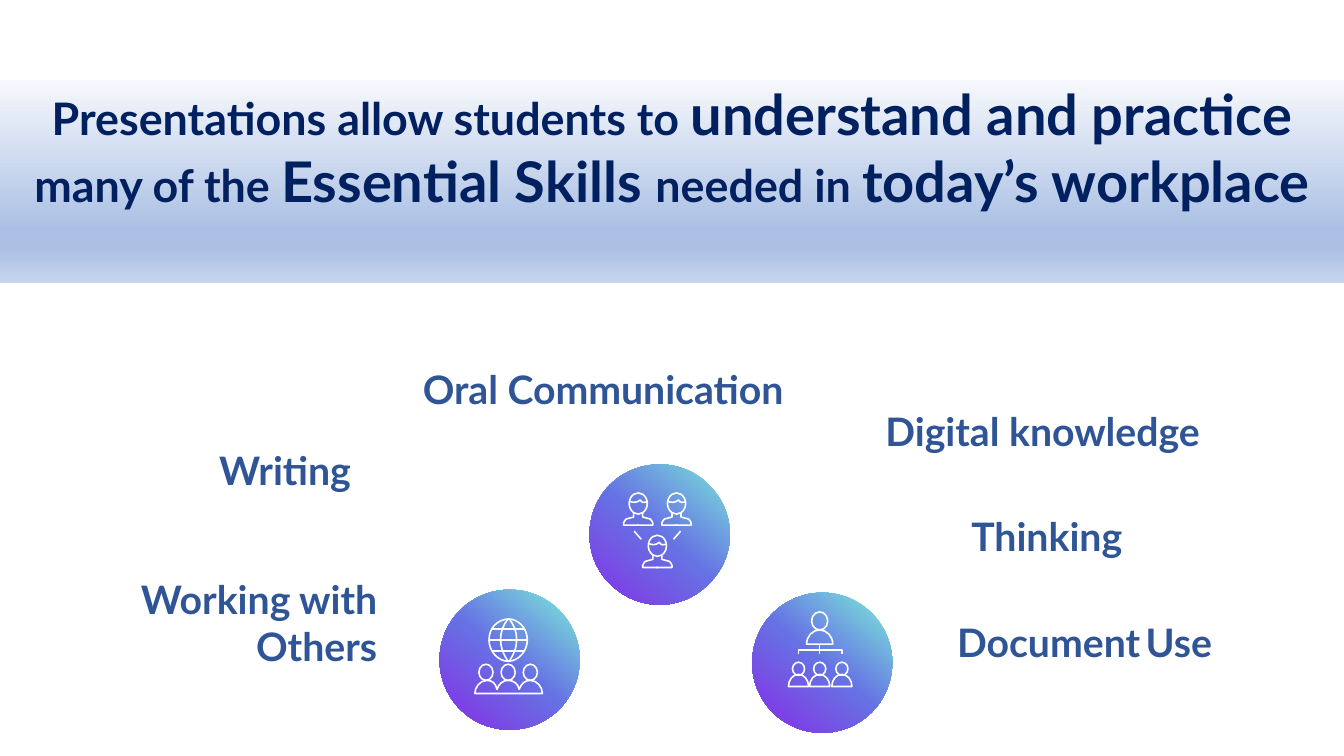
from lxml.etree import SubElement
from pptx import Presentation
from pptx.dml.color import RGBColor as RGB
from pptx.enum.shapes import MSO_CONNECTOR as LINK, MSO_SHAPE as FORM
from pptx.enum.text import MSO_ANCHOR as ANCHOR, MSO_AUTO_SIZE as FIT, PP_ALIGN as ALIGN
from pptx.oxml.ns import qn
from pptx.shapes.connector import Connector
from pptx.util import Inches, Pt

# The slide is a grid of 1333 columns by 750 rows
CELL = Inches(0.01)
COLS, ROWS = 1333, 750
FONT = "Lato"
COLORS = {"navy": "002060", "blue": "2F5597", "white": "FFFFFF"}
BAND_STOPS = [(0, "F6F8FC"), (74, "ABC0E4"), (83, "ABC0E4"), (100, "C7D5ED")]
DISC_STOPS = [(0, "7CEFD8"), (50, "6672E4"), (100, "882BE5")]

deck = Presentation()
deck.slide_width, deck.slide_height = COLS * CELL, ROWS * CELL
slide = deck.slides.add_slide(deck.slide_layouts[5])


def paint_gradient(shape, stops, angle):
    shape.fill.gradient()
    shape.fill.gradient_angle = 0
    grad = shape._element.spPr.find(qn("a:gradFill"))
    grad.find(qn("a:lin")).set("ang", str(angle * 60000))
    stop_list = grad.find(qn("a:gsLst"))
    stop_list.clear()
    for position, color in stops:
        stop = SubElement(stop_list, qn("a:gs"), pos=str(position * 1000))
        SubElement(stop, qn("a:srgbClr"), val=color)


def draw_outline(icon, origin, start, segments, close=False, flip=1):
    """Two numbers make a straight segment, six a cubic curve."""
    numbers = list(start) + [number for segment in segments for number in segment]
    placed = [(round((origin[0] + flip * x) * CELL), round((origin[1] + y) * CELL))
              for x, y in zip(numbers[::2], numbers[1::2])]
    pen = icon.shapes.build_freeform(*placed[0])
    pen.add_line_segments(placed[1:], close=close)
    outline = pen.convert_to_shape()
    # Join three straight steps into one cubic curve
    steps = iter(list(outline._element.iter(qn("a:lnTo"))))
    for segment in segments:
        first = next(steps)
        if len(segment) == 6:
            curve = first.getparent().makeelement(qn("a:cubicBezTo"))
            first.addprevious(curve)
            for step in (first, next(steps), next(steps)):
                curve.append(step[0])
                step.getparent().remove(step)
    return outline


# Title band
title = slide.shapes.title
title.left, title.top, title.width, title.height = 0, 79 * CELL, COLS * CELL, 202 * CELL
paint_gradient(title, BAND_STOPS, 90)
title_frame = title.text_frame
title_frame.auto_size, title_frame.vertical_anchor = FIT.NONE, ANCHOR.TOP
title_frame.margin_left = title_frame.margin_right = 0
title_frame.margin_top = title_frame.margin_bottom = 0
title_line = title_frame.paragraphs[0]
title_line.alignment = ALIGN.CENTER
for text, size in [("Presentations allow students to ", 32), ("understand and practice ", 40),
                   ("many of the ", 32), ("Essential Skills ", 40),
                   ("needed in ", 32), ("today’s workplace", 40)]:
    run = title_line.add_run()
    run.text = text
    run.font.name, run.font.size, run.font.bold = FONT, Pt(size), True
    run.font.color.rgb = RGB.from_string(COLORS["navy"])

# Gradient discs, one group for each icon
hierarchy, network, community = icons = [slide.shapes.add_group_shape() for _ in range(3)]
discs = [icon.shapes.add_shape(FORM.OVAL, left * CELL, top * CELL, 139 * CELL, 139 * CELL)
         for icon, left, top in [(hierarchy, 746, 588), (community, 436, 585)]]
discs.append(draw_outline(network, (654, 530), (49, 49),
                          [(23, 77, -22, 77, -49, 49), (-76, 23, -76, -22, -49, -49),
                           (-22, -76, 23, -76, 49, -49), (77, -22, 77, 23, 49, 49)], close=True))
for disc in discs:
    paint_gradient(disc, DISC_STOPS, 130)
    disc.line.fill.background()
    disc.shadow.inherit = False

# Heads: icon, centre column, top row, width, height
avatars = [(633, 489), (671, 489), (652, 531)]
heads = [(hierarchy, 813, 607, 16, 18)]
heads += [(hierarchy, x, 657, 12, 13) for x in (792, 813, 835)]
heads += [(network, x, y, 18, 21) for x, y in avatars]
heads += [(community, x, 659, 14, 16) for x in (482, 504, 526)]
for icon, center, top, width, height in heads:
    icon.shapes.add_shape(FORM.OVAL, round((center - width / 2) * CELL), top * CELL,
                          width * CELL, height * CELL)

# Hierarchy: domed bodies and the bracket between them
for center, base, half, height in [(813, 639, 13, 14)] + [(x, 681, 10, 12) for x in (792, 813, 835)]:
    bend, rise = half * 0.55, height * 0.55
    draw_outline(hierarchy, (center, base), (half, 0),
                 [(-half, 0), (-half, -rise, -bend, -height, 0, -height),
                  (bend, -height, half, -rise, half, 0)], close=True)
draw_outline(hierarchy, (792, 645), (0, 4), [(0, 0), (43, 0), (43, 4)])

# Network: shoulders and hair of each avatar
for avatar in avatars:
    for side in (-1, 1):
        draw_outline(network, avatar, (4.5, 19),
                     [(4.5, 24), (12, 26), (13, 27, 14.5, 29, 14.5, 30), (14.5, 32), (-1, 32)],
                     flip=side)
    draw_outline(network, avatar, (9, 9), [(7, 10, 3, 10, 2, 7), (-1, 10, -6, 10, -9, 8)])

# Community: globe, meridians and the joined shoulders
draw_outline(community, (504, 635), (19, 0),
             [(19, 11, 10, 21, 0, 21), (-10, 21, -19, 11, -19, 0),
              (-19, -12, -11, -20, 0, -21), (10, -21, 19, -12, 19, 0)], close=True)
for side in (-1, 1):
    draw_outline(community, (504.5, 614), (0.5, 0), [(10.5, 12, 10.5, 28, 0.5, 42)], flip=side)
draw_outline(community, (504, 675), (22, 0),
             [(17, 0, 13, 3, 11, 9), (10, 3, 5, 0, 0, 0), (-5, 0, -9, 3, -11, 9),
              (-12, 3, -16, 0, -21, 0), (-28, 0, -33, 7, -33, 13), (34, 13),
              (34, 7, 29, 0, 22, 0)], close=True)

# Straight links
for icon, x1, y1, x2, y2 in [(hierarchy, 813, 639, 813, 649),
                             (network, 629, 527, 636, 535), (network, 675, 527, 668, 535),
                             (community, 488, 646, 520, 646), (community, 488, 624, 520, 624),
                             (community, 485, 635, 523, 635)]:
    icon.shapes.add_connector(LINK.STRAIGHT, x1 * CELL, y1 * CELL, x2 * CELL, y2 * CELL)

# White line work on every disc
for icon in icons:
    for part in list(icon.shapes)[1:]:
        if not isinstance(part, Connector):
            part.fill.background()
        part.line.color.rgb = RGB.from_string(COLORS["white"])
        part.line.width = Pt(1.13)
        SubElement(part._element.spPr, qn("a:effectLst"))

# Skill labels: left, top, width, height, runs
skills = [
    (369, 362, 408, 47, [("Oral Communication", 28)]),
    (48, 571, 326, 94, [("Working with Others", 28)]),
    (939, 508, 174, 47, [("Thinking", 28)]),
    (174, 443, 174, 47, [("Writing", 28)]),
    (939, 613, 263, 47, [("Document", 28), (" ", 16), ("Use", 28)]),
    (826, 404, 364, 47, [("Digital knowledge", 28)]),
]
for *place, runs in skills:
    skill = slide.shapes.add_textbox(*[cells * CELL for cells in place]).text_frame
    skill.word_wrap, skill.auto_size = True, FIT.SHAPE_TO_FIT_TEXT
    skill.margin_left = skill.margin_right = skill.margin_top = skill.margin_bottom = 0
    skill.paragraphs[0].alignment = ALIGN.RIGHT
    for text, size in runs:
        run = skill.paragraphs[0].add_run()
        run.text = text
        run.font.name, run.font.size, run.font.bold = FONT, Pt(size), True
        run.font.color.rgb = RGB.from_string(COLORS["blue"])

deck.save("out.pptx")
